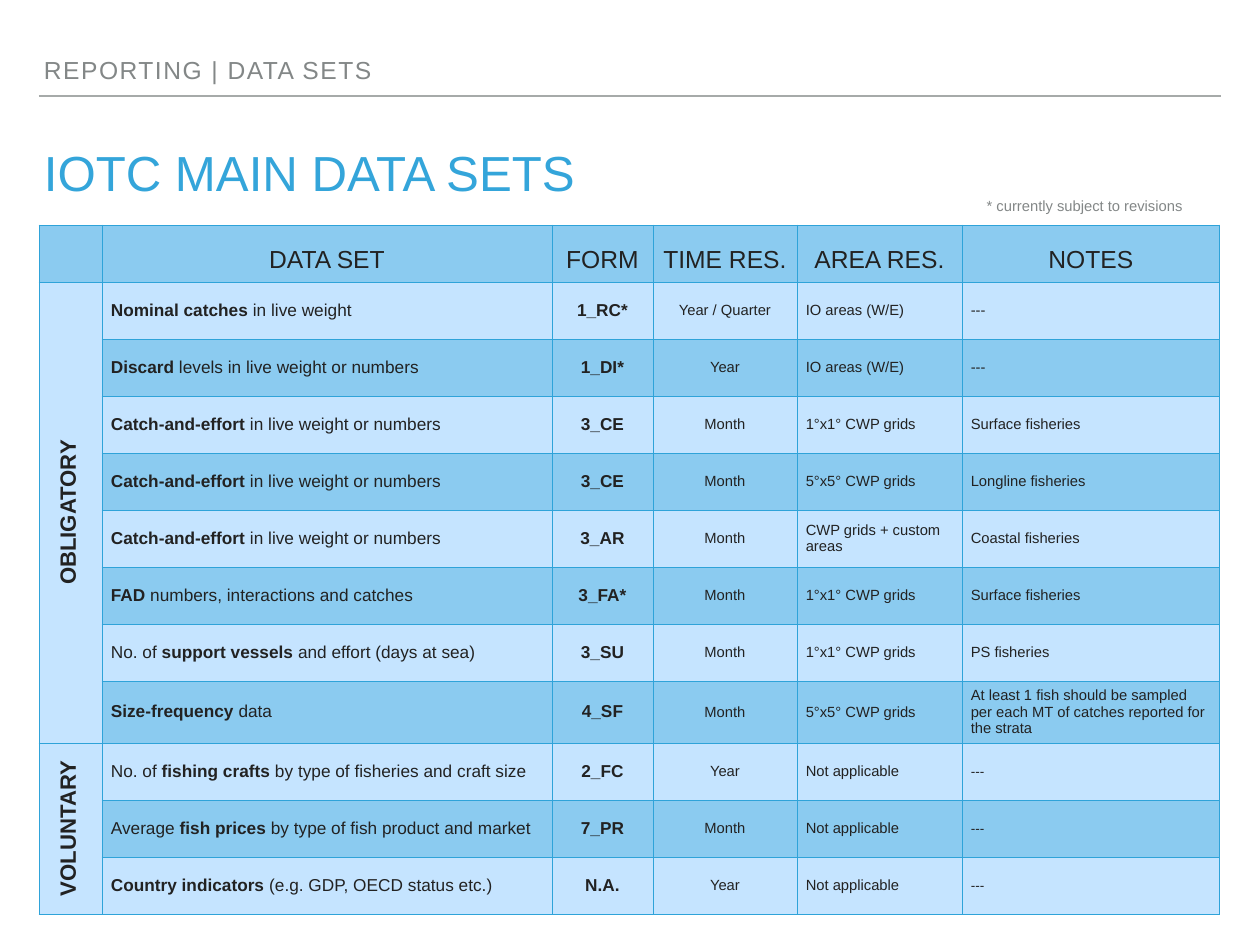
from lxml.etree import SubElement
from pptx import Presentation
from pptx.dml.color import RGBColor
from pptx.enum.shapes import MSO_CONNECTOR
from pptx.enum.text import MSO_ANCHOR, MSO_AUTO_SIZE, PP_ALIGN
from pptx.oxml.ns import qn
from pptx.util import Pt

EMU_PER_PX = 10321
FONT = "Arial"
BLUE = RGBColor(0x34, 0xA5, 0xDA)
BORDER = RGBColor(0x2F, 0xA3, 0xD9)
STRIPE = RGBColor(0x8B, 0xCB, 0xF0)
LIGHT = RGBColor(0xC5, 0xE4, 0xFF)
INK = RGBColor(0x22, 0x22, 0x22)
GRAY = RGBColor(0x83, 0x87, 0x87)
RULE = RGBColor(0xA6, 0xAA, 0xA9)

COLUMN_WIDTHS = [63, 450, 101, 144, 165, 258]
ROW_HEIGHT = 57
TALL_ROW, TALL_HEIGHT = 8, 62
HEADINGS = ["DATA SET", "FORM", "TIME RES.", "AREA RES.", "NOTES"]
CATCH_EFFORT = ("", "Catch-and-effort", " in live weight or numbers")
OBLIGATORY = [
    (("", "Nominal catches", " in live weight"), "1_RC*", "Year / Quarter", "IO areas (W/E)", "---"),
    (("", "Discard", " levels in live weight or numbers"), "1_DI*", "Year", "IO areas (W/E)", "---"),
    (CATCH_EFFORT, "3_CE", "Month", "1°x1° CWP grids", "Surface fisheries"),
    (CATCH_EFFORT, "3_CE", "Month", "5°x5° CWP grids", "Longline fisheries"),
    (CATCH_EFFORT, "3_AR", "Month", "CWP grids + custom areas", "Coastal fisheries"),
    (("", "FAD", " numbers, interactions and catches"), "3_FA*", "Month", "1°x1° CWP grids", "Surface fisheries"),
    (("No. of ", "support vessels", " and effort (days at sea)"), "3_SU", "Month", "1°x1° CWP grids", "PS fisheries"),
    (("", "Size-frequency", " data"), "4_SF", "Month", "5°x5° CWP grids",
     "At least 1 fish should be sampled per each MT of catches reported for the strata"),
]
VOLUNTARY = [
    (("No. of ", "fishing crafts", " by type of fisheries and craft size"), "2_FC", "Year", "Not applicable", "---"),
    (("Average ", "fish prices", " by type of fish product and market"), "7_PR", "Month", "Not applicable", "---"),
    (("", "Country indicators", " (e.g. GDP, OECD status etc.)"), "N.A.", "Year", "Not applicable", "---"),
]
GROUPS = [("OBLIGATORY", OBLIGATORY), ("VOLUNTARY", VOLUNTARY)]


def px(length):
    return length * EMU_PER_PX


def format_span(span, size, color, bold=False):
    span.font.name = FONT
    span.font.size = Pt(size)
    span.font.bold = bold
    span.font.color.rgb = color


def fill_box(box, area, text, size, color, anchor=MSO_ANCHOR.TOP, spacing=1.0):
    box.left, box.top, box.width, box.height = map(px, area)
    frame = box.text_frame
    frame.text = text
    frame.word_wrap = True
    frame.auto_size = MSO_AUTO_SIZE.NONE
    frame.vertical_anchor = anchor
    para = frame.paragraphs[0]
    para.alignment = PP_ALIGN.LEFT
    para.line_spacing = spacing
    para.space_before = Pt(0)
    format_span(para.runs[0], size, color)
    return para


def fill_placeholder(box, area, text, size, color, anchor=MSO_ANCHOR.TOP):
    para = fill_box(box, area, text, size, color, anchor, 0.8)
    frame = box.text_frame
    frame.margin_left = frame.margin_right = px(5)
    frame.margin_top = frame.margin_bottom = px(5)
    return para


def add_heading(box):
    para = fill_placeholder(box, (39, 55, 1083, 34), "REPORTING | DATA SETS", 20, GRAY, MSO_ANCHOR.BOTTOM)
    properties = para._p.get_or_add_pPr()
    properties.set("marL", "0")
    properties.set("indent", "0")
    SubElement(properties, qn("a:buNone"))
    para.runs[0]._r.get_or_add_rPr().set("spc", "120")


def add_rule(slide):
    rule = slide.shapes.add_connector(MSO_CONNECTOR.STRAIGHT, px(39), px(96), px(1221), px(96))
    rule.line.color.rgb = RULE
    rule.line.width = Pt(2)
    SubElement(rule._element.spPr, qn("a:effectLst"))


def style_cell(cell, color):
    properties = cell._tc.get_or_add_tcPr()
    for side in ("lnL", "lnR", "lnT", "lnB"):
        line = SubElement(properties, qn(f"a:{side}"), w=str(Pt(0.75)))
        solid = SubElement(line, qn("a:solidFill"))
        SubElement(solid, qn("a:srgbClr"), val=str(BORDER))
    cell.fill.solid()
    cell.fill.fore_color.rgb = color
    cell.vertical_anchor = MSO_ANCHOR.MIDDLE


def write_cell(cell, text, size, bold=False, align=PP_ALIGN.CENTER, spacing=1.0):
    cell.text_frame.text = text
    para = cell.text_frame.paragraphs[0]
    para.alignment = align
    para.line_spacing = spacing
    format_span(para.runs[0], size, INK, bold)


def write_data_set(cell, parts):
    para = cell.text_frame.paragraphs[0]
    for part, bold in zip(parts, (False, True, False)):
        if part:
            span = para.add_run()
            span.text = part
            format_span(span, 14, INK, bold)


def write_group(table, first_row, name, records):
    label = table.cell(first_row, 0)
    label.merge(table.cell(first_row + len(records) - 1, 0))
    write_cell(label, name, 18, bold=True, spacing=1.5)
    label._tc.get_or_add_tcPr().set("vert", "vert270")
    for row, (data_set, form, time, area, notes) in enumerate(records, first_row):
        write_data_set(table.cell(row, 1), data_set)
        write_cell(table.cell(row, 2), form, 14, bold=True)
        write_cell(table.cell(row, 3), time, 12)
        write_cell(table.cell(row, 4), area, 12, align=PP_ALIGN.LEFT)
        notes_size = 11 if records is VOLUNTARY else 12
        write_cell(table.cell(row, 5), notes, notes_size, align=PP_ALIGN.LEFT)


def add_data_sets_table(slide):
    row_count = 1 + sum(len(records) for name, records in GROUPS)
    table = slide.shapes.add_table(row_count, len(COLUMN_WIDTHS), px(39), px(225),
                                   px(sum(COLUMN_WIDTHS)), px(row_count * ROW_HEIGHT)).table
    table.first_row = False
    table.horz_banding = False
    for column, width in zip(table.columns, COLUMN_WIDTHS):
        column.width = px(width)
    for index, row in enumerate(table.rows):
        row.height = px(TALL_HEIGHT if index == TALL_ROW else ROW_HEIGHT)
        for column, cell in enumerate(row.cells):
            striped = index == 0 or (column > 0 and index % 2 == 0)
            style_cell(cell, STRIPE if striped else LIGHT)
    for column, heading in enumerate(HEADINGS, 1):
        write_cell(table.cell(0, column), heading, 20, spacing=1.5)
    first_row = 1
    for name, records in GROUPS:
        write_group(table, first_row, name, records)
        first_row += len(records)


def main():
    deck = Presentation()
    deck.slide_width, deck.slide_height = px(1260), px(945)
    slide = deck.slides.add_slide(deck.slide_layouts[1])
    add_rule(slide)
    add_heading(slide.placeholders[1])
    fill_placeholder(slide.shapes.title, (39, 149, 1181, 70), "IOTC MAIN DATA SETS", 40, BLUE)
    note = slide.shapes.add_textbox(0, 0, 0, 0)
    fill_box(note, (978, 192, 242, 27), "* currently subject to revisions", 12, GRAY)
    add_data_sets_table(slide)
    deck.save("out.pptx")


if __name__ == "__main__":
    main()
